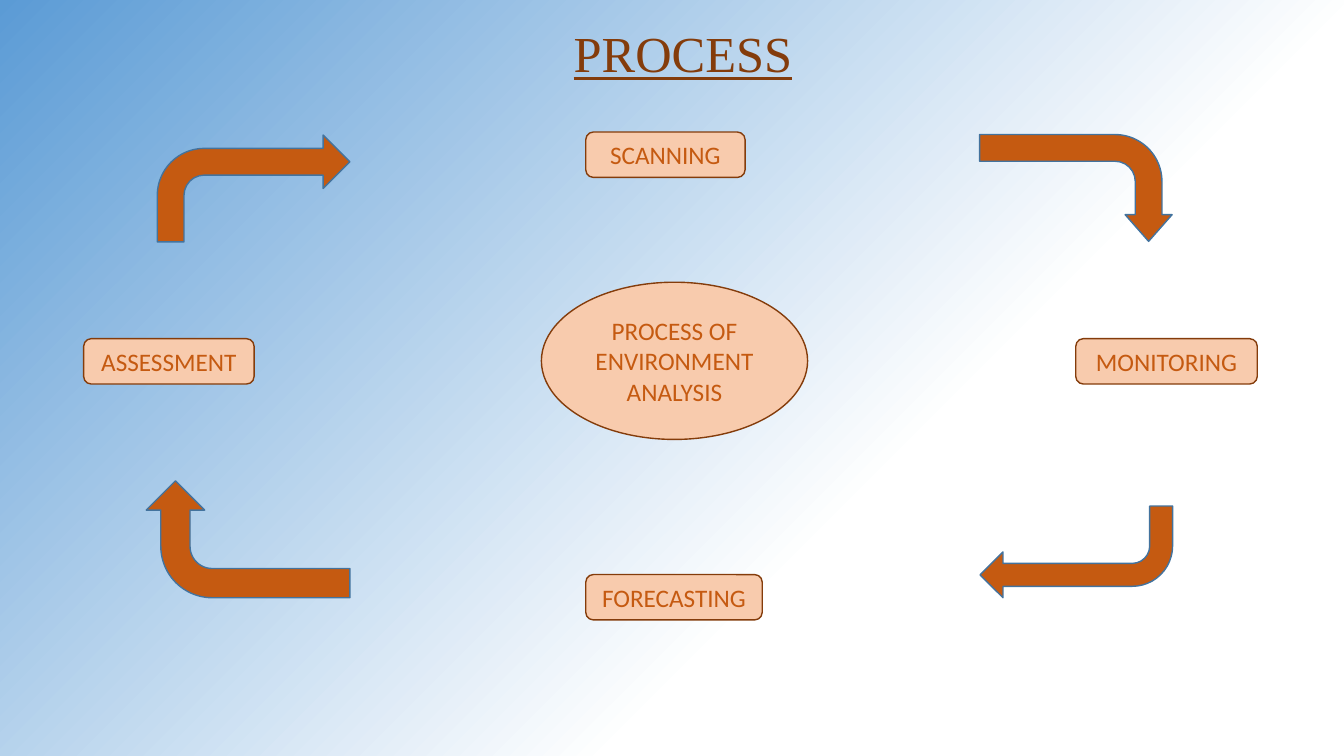
"""Build the environment analysis process cycle slide."""
from dataclasses import dataclass

from lxml import etree
from pptx import Presentation
from pptx.dml.color import RGBColor
from pptx.enum.shapes import MSO_SHAPE
from pptx.enum.text import MSO_ANCHOR, MSO_AUTO_SIZE, PP_ALIGN
from pptx.oxml import parse_xml
from pptx.oxml.ns import nsdecls, qn
from pptx.util import Inches, Pt

BENT_ARROW = MSO_SHAPE.BENT_ARROW
ROUNDED = MSO_SHAPE.ROUNDED_RECTANGLE
OVAL = MSO_SHAPE.OVAL
TOP, MIDDLE = MSO_ANCHOR.TOP, MSO_ANCHOR.MIDDLE
LEFT, CENTER = PP_ALIGN.LEFT, PP_ALIGN.CENTER
FIT_SHAPE = MSO_AUTO_SIZE.SHAPE_TO_FIT_TEXT
TITLE_ONLY = 5


@dataclass(frozen=True)
class Theme:
    title_font: str = "Times New Roman"
    label_font: str = "Calibri"
    title_size: int = 36
    label_size: int = 18
    dark: str = "843C0B"
    accent: str = "C55A11"
    pale: str = "F8CBAD"
    arrow_line: str = "43739E"
    line_width: float = 1
    text_outline: float = 0.75
    background: tuple = ((0, "FFFFFF"), (35, "FFFFFF"), (100, "5B9BD5"))


THEME = Theme()
TITLE = ("PROCESS", (5.59, 0.17, 2.39, 0.71))
STEP_HEIGHT = 0.45
STEPS = [
    ("SCANNING", 5.81, 1.31, 1.58),
    ("MONITORING", 10.67, 3.36, 1.8),
    ("FORECASTING", 5.81, 5.7, 1.75),
    ("ASSESSMENT", 0.83, 3.36, 1.69),
]
CENTRE = ("PROCESS OF\nENVIRONMENT\nANALYSIS", (5.37, 2.8, 2.64, 1.56))
ARROWS = [
    ((1.56, 1.34, 1.91, 1.06), 0, (0.25, 0.25, 0.25, 0.44)),
    ((10.14, 0.91, 1.06, 1.91), 90, (0.25, 0.22, 0.25, 0.44)),
    ((9.72, 5.02, 1.91, 0.91), 180, (0.25, 0.25, 0.25, 0.44)),
    ((1.88, 4.34, 1.16, 2.02), 270, (0.25, 0.25, 0.25, 0.44)),
]


def set_background(slide):
    """Fill the background with a gradient centred on the lower right corner."""
    stops = "".join(
        f'<a:gs pos="{position * 1000}"><a:srgbClr val="{color}"/></a:gs>'
        for position, color in THEME.background
    )
    background = parse_xml(
        f'<p:bg {nsdecls("p", "a")}><p:bgPr><a:gradFill rotWithShape="1">'
        f'<a:gsLst>{stops}</a:gsLst><a:path path="circle">'
        '<a:fillToRect l="100000" t="100000"/></a:path></a:gradFill>'
        "<a:effectLst/></p:bgPr></p:bg>"
    )
    slide.element.cSld.insert(0, background)


def outline_run(run, color):
    """Outline the letters of a run."""
    line = etree.Element(qn("a:ln"), w=str(Pt(THEME.text_outline)))
    fill = etree.SubElement(line, qn("a:solidFill"))
    etree.SubElement(fill, qn("a:srgbClr"), val=color)
    run.font._element.insert(0, line)


def write_text(shape, text, *, font, size, color, align=CENTER,
               anchor=MIDDLE, underline=None, outline=None):
    """Write one paragraph per line of text."""
    frame = shape.text_frame
    frame.text = text
    frame.word_wrap = False
    frame.vertical_anchor = anchor
    for paragraph in frame.paragraphs:
        paragraph.alignment = align
        for run in paragraph.runs:
            run.font.name = font
            run.font.size = Pt(size)
            run.font.underline = underline
            run.font.color.rgb = RGBColor.from_string(color)
            if outline:
                outline_run(run, outline)


def add_figure(slide, kind, box, fill, line):
    """Add a flat preset shape."""
    shape = slide.shapes.add_shape(kind, *map(Inches, box))
    shape.shadow.inherit = False
    shape.fill.solid()
    shape.fill.fore_color.rgb = RGBColor.from_string(fill)
    shape.line.color.rgb = RGBColor.from_string(line)
    shape.line.width = Pt(THEME.line_width)
    return shape


def add_label(slide, kind, box, text):
    """Add a pale shape with an outlined label."""
    shape = add_figure(slide, kind, box, THEME.pale, THEME.dark)
    write_text(shape, text, font=THEME.label_font, size=THEME.label_size,
               color=THEME.accent, outline=THEME.dark)


def add_title(slide):
    """Place the underlined title."""
    text, box = TITLE
    title = slide.shapes.title
    title.left, title.top, title.width, title.height = map(Inches, box)
    write_text(title, text, font=THEME.title_font, size=THEME.title_size,
               color=THEME.dark, align=LEFT, anchor=TOP, underline=True)
    title.text_frame.auto_size = FIT_SHAPE


def main():
    """Build and save the slide."""
    presentation = Presentation()
    presentation.slide_width = Inches(13.33)
    presentation.slide_height = Inches(7.5)
    slide = presentation.slides.add_slide(presentation.slide_layouts[TITLE_ONLY])
    set_background(slide)
    add_title(slide)
    for box, rotation, adjustments in ARROWS:
        arrow = add_figure(slide, BENT_ARROW, box, THEME.accent, THEME.arrow_line)
        arrow.rotation = rotation
        for index, value in enumerate(adjustments):
            arrow.adjustments[index] = value
    for text, left, top, width in STEPS:
        add_label(slide, ROUNDED, (left, top, width, STEP_HEIGHT), text)
    text, box = CENTRE
    add_label(slide, OVAL, box, text)
    presentation.save("out.pptx")


if __name__ == "__main__":
    main()
